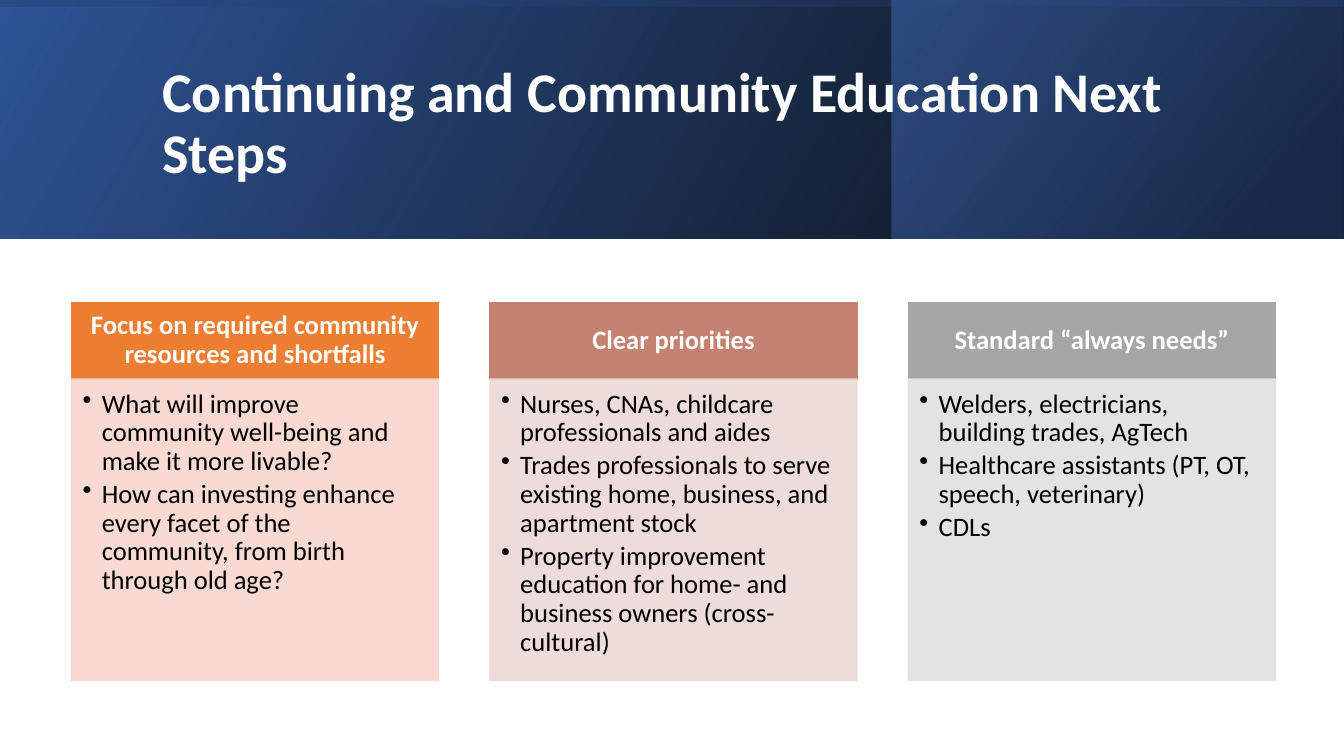
"""Build the slide on next steps for continuing and community education."""
from pptx import Presentation
from pptx.dml.color import RGBColor
from pptx.enum import shapes, text
from pptx.oxml.ns import qn
from pptx.util import Inches, Pt

HUES = {
    "white": "FFFFFF", "black": "000000", "navy": "203864",
    "blue": "2F5597", "sky": "4472C4",
    "orange": "ED7D31", "peach": "F8D7CE",
    "rust": "C48170", "rose": "EDD9D7",
    "gray": "A5A5A5", "pale": "E1E1E1",
}
TITLE = "Continuing and Community Education Next Steps"
BANDS = [
    ((0, 0, 13.33, 2.37), 0, 330, [(0, "black", 96), (100, "blue", 100)]),
    ((8.84, 0, 4.48, 2.37), 0, 320, [(19, "navy", 68), (100, "sky", 48)]),
    ((5.48, -5.48, 2.37, 13.33), 270, 350, [(23, "blue", 16), (99, "black", 45)]),
]
CARDS = [
    ("Focus on required community resources and shortfalls", "orange", "peach", [
        "What will improve community well-being and make it more livable?",
        "How can investing enhance every facet of the community, from birth through old age?",
    ]),
    ("Clear priorities", "rust", "rose", [
        "Nurses, CNAs, childcare professionals and aides",
        "Trades professionals to serve existing home, business, and apartment stock",
        "Property improvement education for home- and business owners (cross-cultural)",
    ]),
    ("Standard “always needs”", "gray", "pale", [
        "Welders, electricians, building trades, AgTech",
        "Healthcare assistants (PT, OT, speech, veterinary)",
        "CDLs",
    ]),
]
LEFT, TOP, WIDTH, STEP = 0.71, 3, 3.64, 4.15
HEAD, BODY = 0.76, 2.99
INDENT = 0.19


def hue(name):
    return RGBColor.from_string(HUES[name])


def fade(color, alpha):
    color.makeelement(qn("a:alpha"))
    node = color.makeelement(qn("a:alpha"), {"val": str(alpha * 1000)})
    color.append(node)


def box(slide, at):
    shape = slide.shapes.add_shape(
        shapes.MSO_SHAPE.RECTANGLE, *[Inches(n) for n in at])
    shape.shadow.inherit = False
    return shape


def band(slide, at, turn, angle, stops):
    shape = box(slide, at)
    shape.rotation = turn
    shape.line.fill.background()
    shape.element.spPr.find(qn("a:xfrm")).set("flipH", "1")
    shape.fill.gradient()
    shape.fill.gradient_angle = 360 - angle
    for stop, (pos, name, _) in zip(shape.fill.gradient_stops, stops):
        stop.position = pos / 100
        stop.color.rgb = hue(name)
    colors = shape.element.spPr.iter(qn("a:srgbClr"))
    for color, (_, _, alpha) in zip(list(colors), stops):
        fade(color, alpha)


def panel(slide, at, name, alpha=100):
    shape = box(slide, at)
    shape.fill.solid()
    shape.fill.fore_color.rgb = hue(name)
    shape.line.color.rgb = hue(name)
    shape.line.width = Pt(1)
    if alpha < 100:
        for color in list(shape.element.spPr.iter(qn("a:srgbClr"))):
            fade(color, alpha)
    return shape


def write(shape, lines, size=19, color="white", bold=False, align="LEFT",
          anchor="MIDDLE", pads=(0.1, 0.05, 0.1, 0.05), after=0, bullet=None):
    frame = shape.text_frame
    frame.word_wrap = True
    frame.auto_size = text.MSO_AUTO_SIZE.NONE
    frame.vertical_anchor = getattr(text.MSO_ANCHOR, anchor)
    (frame.margin_left, frame.margin_top,
     frame.margin_right, frame.margin_bottom) = [Inches(n) for n in pads]
    for i, line in enumerate(lines):
        para = frame.paragraphs[0] if i == 0 else frame.add_paragraph()
        para.alignment = getattr(text.PP_ALIGN, align)
        para.line_spacing = 0.9
        para.space_after = Pt(after)
        run = para.add_run()
        run.text = line
        font = run.font
        font.name, font.size, font.bold = "Calibri", Pt(size), bold
        font.color.rgb = hue(color)
        if bullet:
            props = para._p.get_or_add_pPr()
            props.set("marL", str(Inches(INDENT)))
            props.set("indent", str(-Inches(INDENT)))
            props.append(props.makeelement(qn("a:buChar"), {"char": bullet}))


def main():
    deck = Presentation()
    deck.slide_width, deck.slide_height = Inches(13.33), Inches(7.5)
    slide = deck.slides.add_slide(deck.slide_layouts[5])
    for item in BANDS:
        band(slide, *item)

    title = slide.shapes.title
    title.left, title.top = Inches(1.51), Inches(0.38)
    title.width, title.height = Inches(10.63), Inches(1.72)
    title.element.getparent().append(title.element)
    write(title, [TITLE], size=40, bold=True)

    for i, (label, dark, light, points) in enumerate(CARDS):
        x = LEFT + i * STEP
        head = panel(slide, (x, TOP, WIDTH, HEAD), dark)
        write(head, [label], bold=True, align="CENTER",
              pads=(0.15, 0.08, 0.15, 0.08))
        body = panel(slide, (x, TOP + HEAD, WIDTH, BODY), light, alpha=90)
        write(body, points, color="black", anchor="TOP",
              pads=(0.11, 0.11, 0.15, 0.17), after=3, bullet="•")
    deck.save("out.pptx")


if __name__ == "__main__":
    main()
